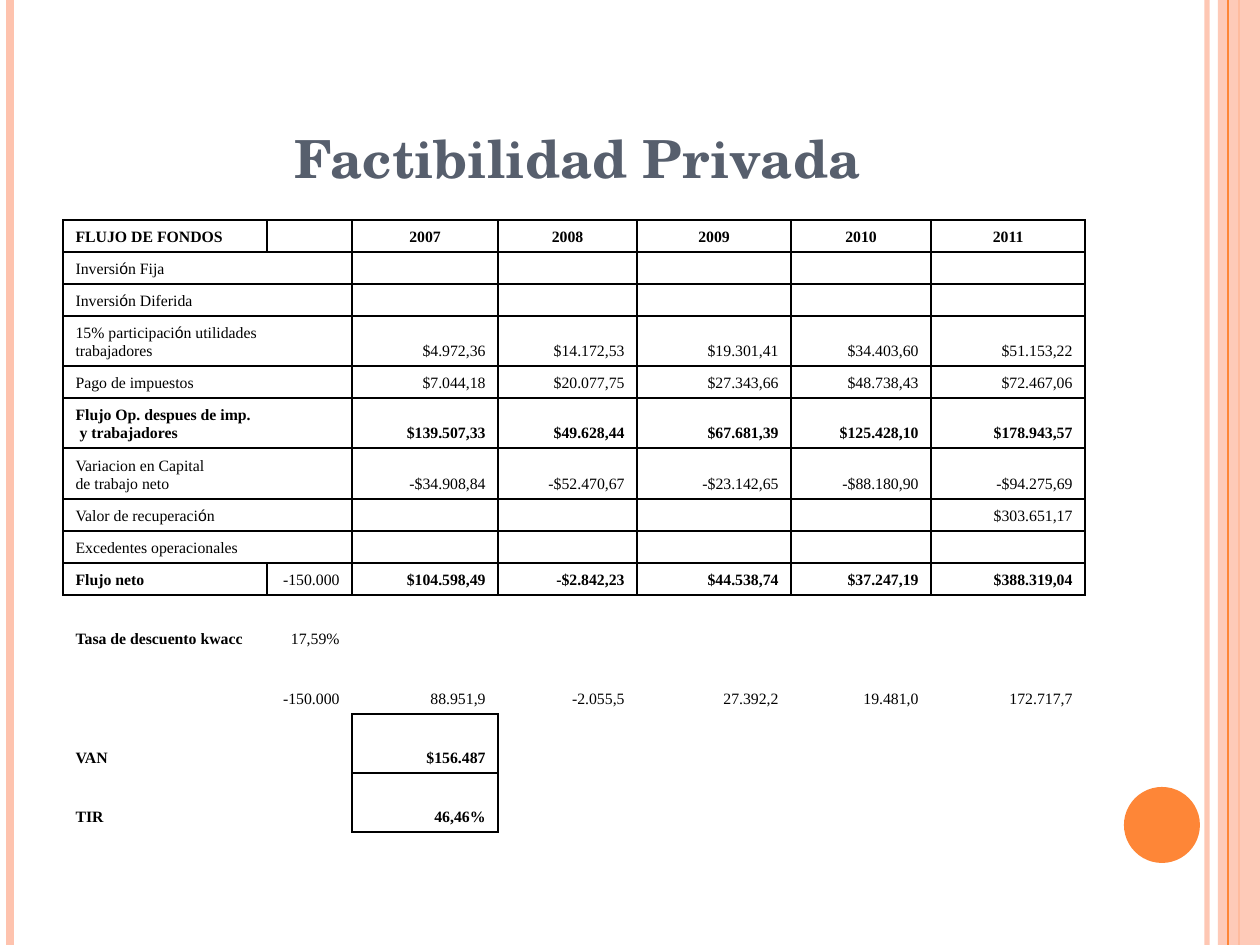
from lxml.etree import SubElement
from pptx import Presentation
from pptx.dml.color import RGBColor
from pptx.enum.shapes import MSO_CONNECTOR, MSO_SHAPE
from pptx.enum.text import MSO_ANCHOR, PP_ALIGN
from pptx.oxml import parse_xml
from pptx.oxml.ns import nsdecls, qn
from pptx.util import Emu, Pt

EMU_PER_PX = 914400 / 126
PEACH, ORANGE = "FEC3AE", "FE8637"
COLUMNS = [174, 28, 85, 146, 139, 154, 140, 154]
HEIGHTS = [32, 32, 32, 50, 32, 50, 51, 32, 32, 32, 59, 60, 59, 59]
ROWS = [
    ["FLUJO DE FONDOS", "", "2007", "2008", "2009", "2010", "2011"],
    ["Inversión Fija"],
    ["Inversión Diferida"],
    ["15% participación utilidades\ntrabajadores", "", "$4.972,36", "$14.172,53",
     "$19.301,41", "$34.403,60", "$51.153,22"],
    ["Pago de impuestos", "", "$7.044,18", "$20.077,75", "$27.343,66",
     "$48.738,43", "$72.467,06"],
    ["Flujo Op. despues de imp.\n y trabajadores", "", "$139.507,33", "$49.628,44",
     "$67.681,39", "$125.428,10", "$178.943,57"],
    ["Variacion en Capital\nde trabajo neto", "", "-$34.908,84", "-$52.470,67",
     "-$23.142,65", "-$88.180,90", "-$94.275,69"],
    ["Valor de recuperación", "", "", "", "", "", "$303.651,17"],
    ["Excedentes operacionales"],
    ["Flujo neto", "-150.000", "$104.598,49", "-$2.842,23", "$44.538,74",
     "$37.247,19", "$388.319,04"],
    ["Tasa de descuento kwacc", "17,59%"],
    ["", "-150.000", "88.951,9", "-2.055,5", "27.392,2", "19.481,0", "172.717,7"],
    ["VAN", "", "$156.487"],
    ["TIR", "", "46,46%"],
]
BOLD_ROWS = {0, 5, 9, 10, 12, 13}
DIVIDED_ROWS = {0, 9}
LABEL_SPANS = {3: (0, 2), 4: (1, 2), 5: (0, 2)}
FUNDS_END, RESULTS_START, RESULT_COLUMN = 10, 12, 3


def px(length):
    """Turn pixels into EMU."""
    return Emu(round(length * EMU_PER_PX))


def color(code):
    """Turn a hex string into a colour."""
    return RGBColor.from_string(code)


def set_alpha(properties, percent):
    """Set the opacity of the colour inside some shape properties."""
    tint = next(properties.iter(qn("a:srgbClr")))
    SubElement(tint, qn("a:alpha")).set("val", str(percent * 1000))


def add_stripe(page, x, width, code, alpha=100):
    """Draw a vertical line over the full page height."""
    line = page.shapes.add_connector(MSO_CONNECTOR.STRAIGHT, px(x), 0, px(x), px(945))
    line.line.width = Pt(width)
    line.line.color.rgb = color(code)
    SubElement(line.element.spPr, qn("a:effectLst"))
    if alpha < 100:
        set_alpha(line.element.spPr, alpha)


def add_block(page, kind, bounds, code, alpha=100):
    """Draw a filled shape without outline."""
    shape = page.shapes.add_shape(kind, *map(px, bounds))
    shape.shadow.inherit = False
    shape.fill.solid()
    shape.fill.fore_color.rgb = color(code)
    shape.line.fill.background()
    if alpha < 100:
        set_alpha(shape.element.spPr, alpha)


def set_title(page, text):
    """Place and format the title."""
    title = page.shapes.title
    title.left, title.top, title.width, title.height = map(px, (63, 38, 1029, 157))
    frame = title.text_frame
    frame.text = text
    frame.word_wrap = True
    frame.vertical_anchor = MSO_ANCHOR.BOTTOM
    para = frame.paragraphs[0]
    para.alignment = PP_ALIGN.CENTER
    font = para.runs[0].font
    font.name, font.size, font.bold = "TeX Gyre Schola", Pt(30), True
    font.color.rgb = color("575F6D")


def has_vertical(row, edge):
    """Tell whether a row has a line at a column edge."""
    if row < FUNDS_END:
        return edge not in (1, 2) or (edge == 2 and row in DIVIDED_ROWS)
    return row >= RESULTS_START and edge in (RESULT_COLUMN, RESULT_COLUMN + 1)


def has_horizontal(edge, column):
    """Tell whether a column has a line at a row edge."""
    return edge <= FUNDS_END or (edge >= RESULTS_START and column == RESULT_COLUMN)


def set_borders(cell, row, column, last):
    """Draw the cell borders that the table rules call for."""
    sides = {
        "L": has_vertical(row, column),
        "R": has_vertical(row, last + 1),
        "T": has_horizontal(row, column),
        "B": has_horizontal(row + 1, column),
    }
    properties = cell._tc.get_or_add_tcPr()
    for index, (side, drawn) in enumerate(sides.items()):
        paint = '<a:solidFill><a:srgbClr val="000000"/></a:solidFill>' if drawn else "<a:noFill/>"
        properties.insert(index, parse_xml(
            f'<a:ln{side} {nsdecls("a")} w="12700">{paint}</a:ln{side}>'))


def write_cell(cell, text, alignment, bold):
    """Write the cell text, with the accented letter in its own font."""
    cell.vertical_anchor = MSO_ANCHOR.BOTTOM
    cell.text_frame.text = "\n" * text.count("\n")
    for para, line in zip(cell.text_frame.paragraphs, text.split("\n")):
        para.alignment = alignment
        for part in filter(None, line.partition("ó")):
            span = para.add_run()
            span.text = part
            span.font.name = "Arial" if part == "ó" else "Times New Roman"
            span.font.size, span.font.bold = Pt(9), bold
            span.font.color.rgb = color("000000")
        if not line:
            SubElement(para._p, qn("a:endParaRPr")).set("sz", "900")


def add_funds_table(page):
    """Build the cash flow table."""
    frame = page.shapes.add_table(len(ROWS), len(COLUMNS), px(63), px(220),
                                  px(sum(COLUMNS)), px(sum(HEIGHTS)))
    table = frame.table
    table.first_row = table.horz_banding = False
    for column, width in zip(table.columns, COLUMNS):
        column.width = px(width)
    for row, (height, values) in enumerate(zip(HEIGHTS, ROWS)):
        table.rows[row].height = px(height)
        first, final = LABEL_SPANS.get(row, (0, 1))
        table.cell(row, first).merge(table.cell(row, final))
        texts = [values[0], ""] + values[1:]
        texts += [""] * (len(COLUMNS) - len(texts))
        for column, text in enumerate(texts):
            cell = table.cell(row, column)
            amount_alignment = PP_ALIGN.CENTER if row == 0 else PP_ALIGN.RIGHT
            alignment = PP_ALIGN.LEFT if column == 0 else amount_alignment
            write_cell(cell, text, alignment, row in BOLD_ROWS and column != 2)
            cell.fill.background()
            set_borders(cell, row, column, final if column == first else column)


def main():
    """Build and save the slide."""
    deck = Presentation()
    deck.slide_width, deck.slide_height = px(1260), px(945)
    page = deck.slides.add_slide(deck.slide_layouts[5])
    add_stripe(page, 1207, 3, PEACH, 93)
    add_stripe(page, 10, 4.5, PEACH)
    add_stripe(page, 1239, 1.5, ORANGE)
    add_block(page, MSO_SHAPE.RECTANGLE, (1218, 0, 42, 945), PEACH, 87)
    add_stripe(page, 1228, 0.75, ORANGE)
    add_block(page, MSO_SHAPE.OVAL, (1124, 787, 76, 76), ORANGE)
    set_title(page, "Factibilidad Privada")
    add_funds_table(page)
    deck.save("out.pptx")


if __name__ == "__main__":
    main()
